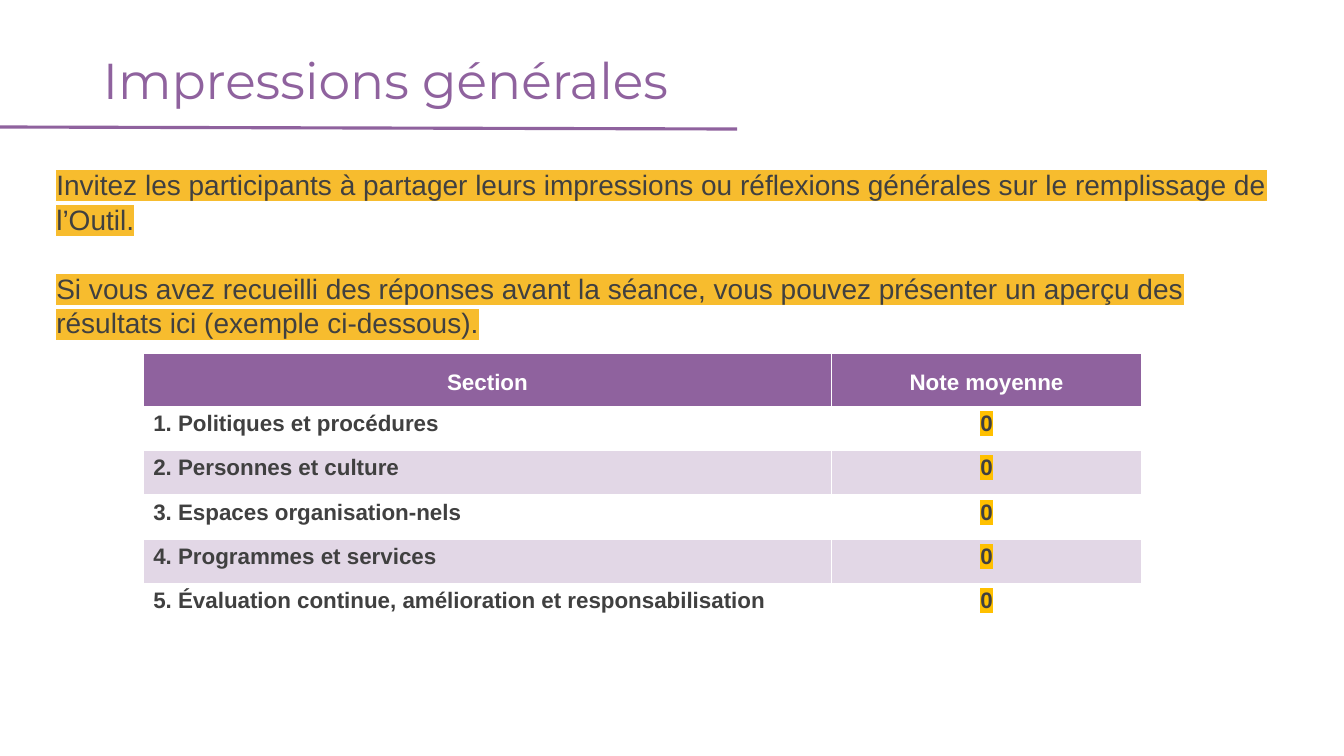
"""Build the slide of general impressions with its table of average marks."""
from dataclasses import dataclass

from lxml import etree
from pptx import Presentation
from pptx import util as u
from pptx.dml import color
from pptx.enum import shapes, text
from pptx.oxml import ns

PURPLE, GREY, WHITE = "8F629E", "404040", "FFFFFF"
AMBER, GOLD = "F7BC2E", "FFC000"
LEFT, MID = text.PP_ALIGN.LEFT, text.PP_ALIGN.CENTER


@dataclass(frozen=True)
class Row:
    label: str
    mark: str
    high: int = 44
    head: bool = False
    tint: bool = False


NOTES = [
    "Invitez les participants à partager leurs impressions ou réflexions "
    "générales sur le remplissage de l’Outil.",
    "Si vous avez recueilli des réponses avant la séance, vous pouvez "
    "présenter un aperçu des résultats ici (exemple ci-dessous).",
]
TOPICS = [
    "Politiques et procédures",
    "Personnes et culture",
    "Espaces organisation-nels",
    "Programmes et services",
    "Évaluation continue, amélioration et responsabilisation",
]
ROWS = [Row("Section", "Note moyenne", high=52, head=True)] + [
    Row(f"{num}. {topic}", "0", tint=num % 2 == 0)
    for num, topic in enumerate(TOPICS, 1)
]
COLS = [683, 307]


def px(num: int) -> u.Emu:
    return u.Emu(num * 9144)


def rgb(code: str) -> color.RGBColor:
    return color.RGBColor.from_string(code)


def node(base, tag: str, **attrs: str):
    return etree.SubElement(base, ns.qn(tag), attrs)


def write(para, words: str, *, size: int, ink: str = GREY, font: str = "Arial",
          bold: bool = False, mark: str = "", align=LEFT, lead=None, gap: int = 0) -> None:
    para.alignment = align
    if lead is not None:
        para.line_spacing = lead
    if gap:
        para.space_before = u.Pt(gap)
    run = para.add_run()
    run.text = words
    run.font.size, run.font.bold = u.Pt(size), bold
    run.font.color.rgb = rgb(ink)
    if mark:
        node(node(run.font._element, "a:highlight"), "a:srgbClr", val=mark)
    run.font.name = font


def edge(cell) -> None:
    props = cell._tc.get_or_add_tcPr()
    for side in ("L", "R", "T", "B"):
        line = node(props, f"a:ln{side}", w=str(u.Pt(0.6)))
        node(node(line, "a:solidFill"), "a:srgbClr", val=WHITE)


def paint(cell, row: Row) -> None:
    edge(cell)
    if not (row.head or row.tint):
        cell.fill.background()
        return
    cell.fill.solid()
    cell.fill.fore_color.rgb = rgb(PURPLE)
    if row.tint:
        tone = cell._tc.tcPr.find(ns.qn("a:solidFill"))[0]
        node(tone, "a:alpha", val="25000")


def add_title(slide) -> None:
    title = slide.shapes.title
    title.left, title.top, title.width, title.height = map(px, (92, 40, 1150, 86))
    frame = title.text_frame
    frame.auto_size = text.MSO_AUTO_SIZE.NONE
    frame.vertical_anchor = text.MSO_ANCHOR.MIDDLE
    write(frame.paragraphs[0], "Impressions générales", size=36, ink=PURPLE,
          font="Montserrat", lead=0.9)


def add_notes(slide) -> None:
    frame = slide.shapes.add_textbox(*map(px, (46, 160, 1241, 212))).text_frame
    frame.word_wrap = True
    for num, words in enumerate(NOTES):
        para = frame.add_paragraph() if num else frame.paragraphs[0]
        write(para, words, size=20, mark=AMBER, lead=1.04, gap=24 * num)


def add_marks(slide) -> None:
    box = map(px, (142, 351, sum(COLS), sum(row.high for row in ROWS)))
    table = slide.shapes.add_table(len(ROWS), len(COLS), *box).table
    table.horz_banding = False
    for col, wide in zip(table.columns, COLS):
        col.width = px(wide)
    for num, row in enumerate(ROWS):
        table.rows[num].height = px(row.high)
        for col, words in enumerate((row.label, row.mark)):
            cell = table.cell(num, col)
            paint(cell, row)
            write(cell.text_frame.paragraphs[0], words, size=16, bold=True,
                  ink=WHITE if row.head else GREY,
                  mark=GOLD if col and not row.head else "",
                  align=MID if col or row.head else LEFT,
                  lead=u.Pt(26.2) if row.head else None)


def add_rule(slide) -> None:
    rule = slide.shapes.add_connector(
        shapes.MSO_CONNECTOR.STRAIGHT, *map(px, (0, 126, 731, 128)))
    rule.line.color.rgb = rgb(PURPLE)
    rule.line.width = u.Pt(2.25)
    node(rule._element.spPr, "a:effectLst")


def main() -> None:
    deck = Presentation()
    deck.slide_width, deck.slide_height = px(1333), px(750)
    slide = deck.slides.add_slide(deck.slide_layouts[5])
    for draw in (add_title, add_notes, add_marks, add_rule):
        draw(slide)
    deck.save("out.pptx")


if __name__ == "__main__":
    main()
